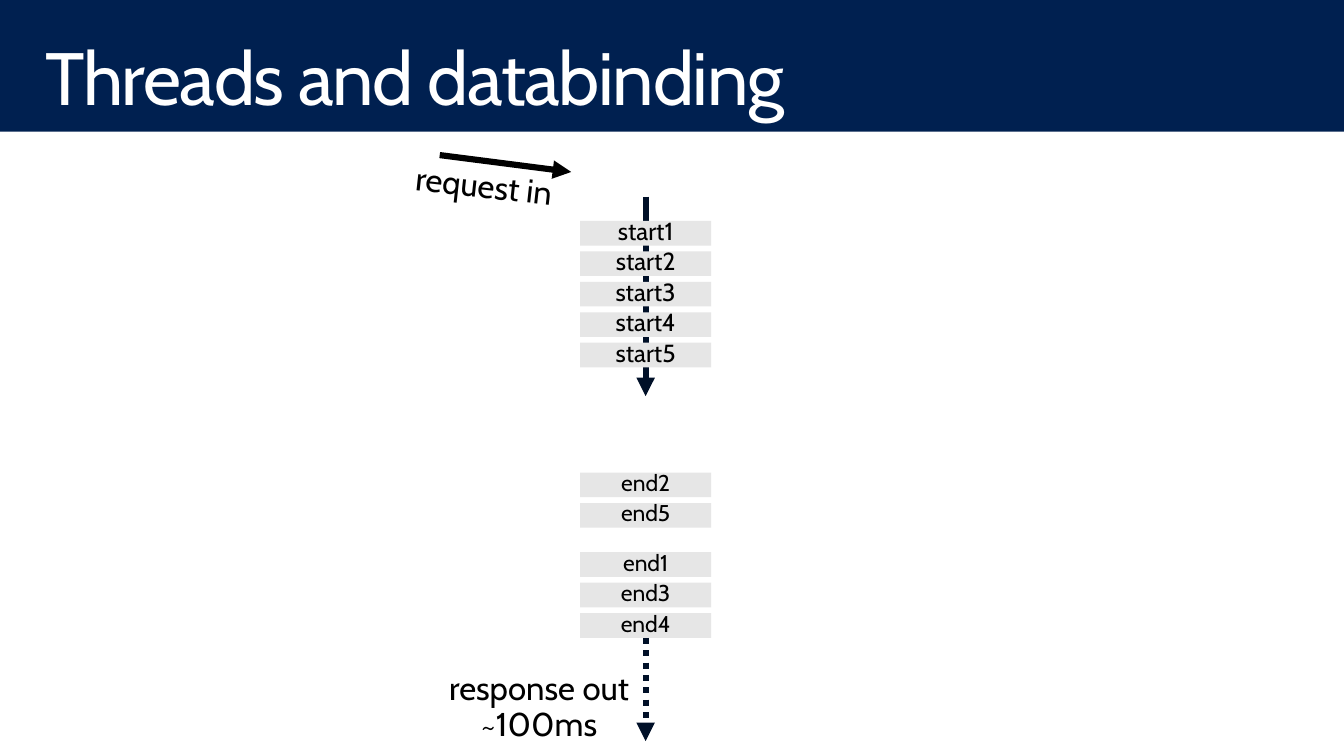
from dataclasses import dataclass

from lxml.etree import SubElement
from pptx import Presentation
from pptx.dml.color import RGBColor
from pptx.enum.dml import MSO_LINE
from pptx.enum.shapes import MSO_CONNECTOR, MSO_SHAPE
from pptx.enum.text import MSO_ANCHOR, PP_ALIGN
from pptx.oxml.ns import qn
from pptx.util import Pt


@dataclass(frozen=True)
class Theme:
    font: str = "Cabin"
    navy: str = "002050"
    thread: str = "001028"
    box: str = "E6E6E6"
    black: str = "000000"
    white: str = "FFFFFF"
    title_size: float = 54
    label_size: float = 24
    start_size: float = 18
    end_size: float = 16.6
    line_width: float = 4.5


def write_text(tf, text, *, font, size, color, align=PP_ALIGN.CENTER,
               anchor=MSO_ANCHOR.MIDDLE, spacing=0.9, after=6,
               inset=(0, 0), wrap=False, tracking=None):
    tf.word_wrap = wrap
    tf.vertical_anchor = anchor
    tf.margin_left = tf.margin_right = Pt(inset[0])
    tf.margin_top = tf.margin_bottom = Pt(inset[1])
    p = tf.paragraphs[0]
    p.text = text
    p.alignment = align
    p.line_spacing = spacing
    p.space_after = Pt(after)
    for r in p.runs:
        r.font.name = font
        r.font.size = Pt(size)
        r.font.color.rgb = RGBColor.from_string(color)
        if tracking is not None:
            r.font._element.set("spc", str(tracking))


class SlideBuilder:
    def __init__(self, slide, theme):
        self.s = slide
        self.theme = theme

    def background(self, color):
        fill = self.s.background.fill
        fill.solid()
        fill.fore_color.rgb = RGBColor.from_string(color)

    def rect(self, x, y, w, h, color):
        sp = self.s.shapes.add_shape(MSO_SHAPE.RECTANGLE, Pt(x), Pt(y), Pt(w), Pt(h))
        sp.shadow.inherit = False
        sp.fill.solid()
        sp.fill.fore_color.rgb = RGBColor.from_string(color)
        sp.line.fill.background()
        return sp

    def step(self, text, x, y, w, h, size):
        sp = self.rect(x, y, w, h, self.theme.box)
        write_text(sp.text_frame, text, font=self.theme.font, size=size,
                   color=self.theme.black, spacing=0.8)
        return sp

    def text(self, text, x, y, w, h, size, color, rotation=0, **fmt):
        sp = self.s.shapes.add_textbox(Pt(x), Pt(y), Pt(w), Pt(h))
        sp.rotation = rotation
        write_text(sp.text_frame, text, font=self.theme.font, size=size,
                   color=color, **fmt)
        return sp

    def arrow(self, x1, y1, x2, y2, color, dash=None, source=None):
        cx = self.s.shapes.add_connector(
            MSO_CONNECTOR.STRAIGHT, Pt(x1), Pt(y1), Pt(x2), Pt(y2))
        if source is not None:
            cx.begin_connect(source, 2)
        cx.line.color.rgb = RGBColor.from_string(color)
        cx.line.width = Pt(self.theme.line_width)
        if dash is not None:
            cx.line.dash_style = dash
        SubElement(cx.line._get_or_add_ln(), qn("a:tailEnd"), type="triangle")
        SubElement(cx._element.spPr, qn("a:effectLst"))
        return cx


def main():
    theme = Theme()
    prs = Presentation()
    prs.slide_width, prs.slide_height = Pt(979.2), Pt(550.8)
    b = SlideBuilder(prs.slides.add_slide(prs.slide_layouts[6]), theme)

    # Title band and white body
    b.background(theme.navy)
    b.rect(0, 95.8, 979.2, 455, theme.white)
    b.text("Threads and databinding", 21.6, 23, 936, 72, theme.title_size,
           theme.white, align=PP_ALIGN.LEFT, anchor=MSO_ANCHOR.TOP, after=0,
           inset=(11.5, 7.2), wrap=True, tracking=-100)

    # Request thread
    axis, box_w, box_h, pitch = 470.4, 95.6, 18, 22.2
    left = axis - box_w / 2
    b.arrow(axis, 143.3, axis, 288.7, theme.thread)
    b.arrow(320.4, 113, 416.2, 125.3, theme.black)
    b.text("request in", 297.4, 123.1, 110.2, 26.6, theme.label_size,
           theme.black, rotation=6.3)

    # Steps on the thread, stacked in groups
    groups = [
        (160.9, theme.start_size, ["start1", "start2", "start3", "start4", "start5"]),
        (344.3, theme.end_size, ["end2", "end5"]),
        (402.3, theme.end_size, ["end1", "end3", "end4"]),
    ]
    for top, size, names in groups:
        for i, name in enumerate(names):
            last_step = b.step(name, left, top + i * pitch, box_w, box_h, size)

    # Response
    b.text("response out\n~100ms", 320.4, 491, 144.7, 49, theme.label_size, theme.black)
    b.arrow(axis, 465, axis, 540, theme.thread, MSO_LINE.ROUND_DOT, last_step)

    prs.save("out.pptx")


if __name__ == "__main__":
    main()
